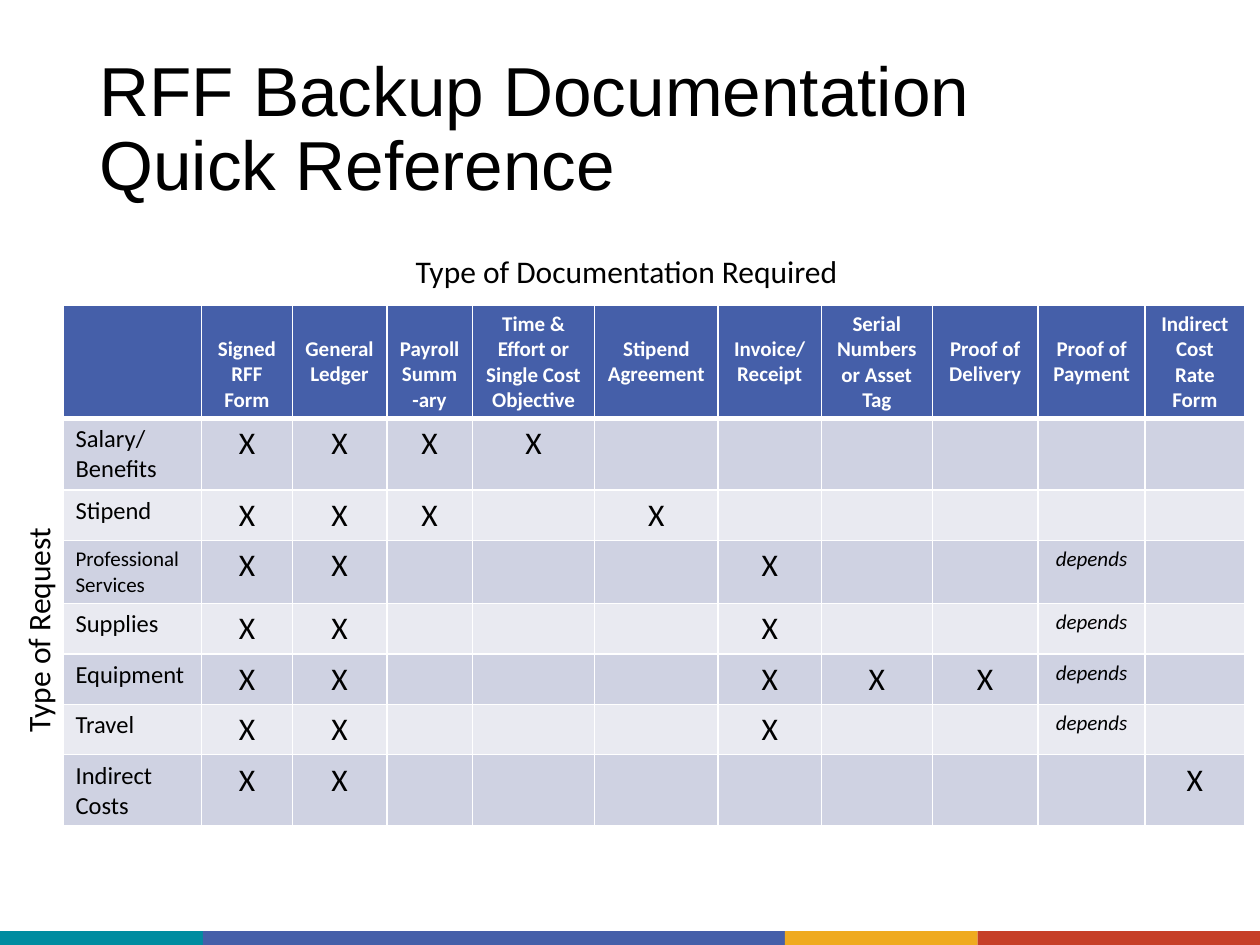
from lxml import etree
from pptx import Presentation
from pptx.dml.color import RGBColor
from pptx.enum.shapes import MSO_SHAPE
from pptx.enum.text import MSO_ANCHOR, PP_ALIGN
from pptx.oxml.ns import qn
from pptx.util import Inches, Pt

RECTANGLE = MSO_SHAPE.RECTANGLE
TOP, MIDDLE = MSO_ANCHOR.TOP, MSO_ANCHOR.MIDDLE
LEFT, CENTER = PP_ALIGN.LEFT, PP_ALIGN.CENTER

BLACK = RGBColor(0x00, 0x00, 0x00)
WHITE = RGBColor(0xFF, 0xFF, 0xFF)
BLUE = RGBColor(0x45, 0x5F, 0xA9)
TEAL = RGBColor(0x00, 0x8C, 0xA0)
GOLD = RGBColor(0xEF, 0xAA, 0x1F)
RED = RGBColor(0xC6, 0x3F, 0x28)
BAND_DARK = RGBColor(0xCF, 0xD2, 0xE2)
BAND_LIGHT = RGBColor(0xE9, 0xEA, 0xF1)

FOOTER_BANDS = [(1.61, TEAL), (4.62, BLUE), (1.53, GOLD), (2.24, RED)]

REQUEST_WIDTH = 1.1
HEADER_HEIGHT = 0.9
CELL_MARGIN = 0.05
HEADER_LINE = 0.2
DOCUMENTS = [
    ("Signed RFF Form", 0.72, True),
    ("General Ledger", 0.75, True),
    ("Payroll Summ-ary", 0.68, True),
    ("Time & Effort or Single Cost Objective", 0.97, False),
    ("Stipend Agreement", 0.98, True),
    ("Invoice/Receipt", 0.82, True),
    ("Serial Numbers or Asset Tag", 0.88, False),
    ("Proof of Delivery", 0.84, True),
    ("Proof of Payment", 0.85, True),
    ("Indirect Cost Rate Form", 0.79, False),
]
REQUESTS = [
    ("Salary/\nBenefits", 14, 0.56, "XXXX......"),
    ("Stipend", 14, 0.4, "XXX.X....."),
    ("Professional Services", 12, 0.5, "XX...X..d."),
    ("Supplies", 14, 0.4, "XX...X..d."),
    ("Equipment", 14, 0.4, "XX...XXXd."),
    ("Travel", 14, 0.4, "XX...X..d."),
    ("Indirect Costs", 14, 0.56, "XX.......X"),
]


def write(frame, text, size, font="Calibri", color=BLACK, align=LEFT, bold=False, italic=False):
    frame.text = text
    for paragraph in frame.paragraphs:
        paragraph.alignment = align
        paragraph.font.name = font
        paragraph.font.size = Pt(size)
        paragraph.font.color.rgb = color
        paragraph.font.bold = bold
        paragraph.font.italic = italic


def add_label(slide, box, text, size, font="Calibri", anchor=TOP, rotation=0):
    label = slide.shapes.add_textbox(*map(Inches, box))
    label.rotation = rotation
    frame = label.text_frame
    frame.word_wrap = True
    frame.vertical_anchor = anchor
    write(frame, text, size, font)
    return frame


def add_title(slide, box):
    frame = add_label(slide, box, "RFF Backup Documentation \vQuick Reference", 39.6, "Arial", MIDDLE)
    frame.paragraphs[0].line_spacing = 0.9


def add_footer(slide, box):
    left, top, _, height = box
    for width, color in FOOTER_BANDS:
        band = slide.shapes.add_shape(RECTANGLE, *map(Inches, (left, top, width, height)))
        band.shadow.inherit = False
        band.fill.solid()
        band.fill.fore_color.rgb = color
        band.line.fill.background()
        left += width


def style_cell(cell, fill, top=1, bottom=1):
    properties = cell._tc.get_or_add_tcPr()
    for side, width in (("L", 1), ("R", 1), ("T", top), ("B", bottom)):
        border = etree.SubElement(properties, qn(f"a:ln{side}"), w=str(Pt(width)))
        solid = etree.SubElement(border, qn("a:solidFill"))
        etree.SubElement(solid, qn("a:srgbClr"), val=str(WHITE))
    cell.fill.solid()
    cell.fill.fore_color.rgb = fill


def fill_header(table):
    table.rows[0].height = Inches(HEADER_HEIGHT)
    table.columns[0].width = Inches(REQUEST_WIDTH)
    style_cell(table.cell(0, 0), BLUE, bottom=3)
    for column, (name, width, lowered) in enumerate(DOCUMENTS, 1):
        table.columns[column].width = Inches(width)
        cell = table.cell(0, column)
        style_cell(cell, BLUE, bottom=3)
        cell.margin_top = Inches(CELL_MARGIN + HEADER_LINE * lowered)
        write(cell.text_frame, name, 12, color=WHITE, align=CENTER, bold=True)


def fill_request(table, row, request):
    name, size, height, marks = request
    table.rows[row].height = Inches(height)
    for cell in table.rows[row].cells:
        style_cell(cell, BAND_DARK if row % 2 else BAND_LIGHT, top=3 if row == 1 else 1)
    write(table.cell(row, 0).text_frame, name, size)
    for column, mark in enumerate(marks, 1):
        frame = table.cell(row, column).text_frame
        if mark == "X":
            write(frame, "X", 18, align=CENTER)
        elif mark == "d":
            write(frame, "depends", 12, align=CENTER, italic=True)


def add_requirements(slide, box):
    table = slide.shapes.add_table(len(REQUESTS) + 1, len(DOCUMENTS) + 1, *map(Inches, box)).table
    fill_header(table)
    for row, request in enumerate(REQUESTS, 1):
        fill_request(table, row, request)


def main():
    deck = Presentation()
    deck.slide_width, deck.slide_height = Inches(10), Inches(7.5)
    slide = deck.slides.add_slide(deck.slide_layouts[6])
    add_footer(slide, (0, 7.39, 10, 0.11))
    add_title(slide, (0.69, 0.64, 8.62, 0.8))
    add_label(slide, (3.2, 1.95, 3.59, 0.4), "Type of Documentation Required", 18)
    add_label(slide, (-0.62, 4.79, 1.84, 0.4), "Type of Request", 18, rotation=270)
    add_requirements(slide, (0.5, 2.42, 9.38, 4.16))
    deck.save("out.pptx")


if __name__ == "__main__":
    main()
